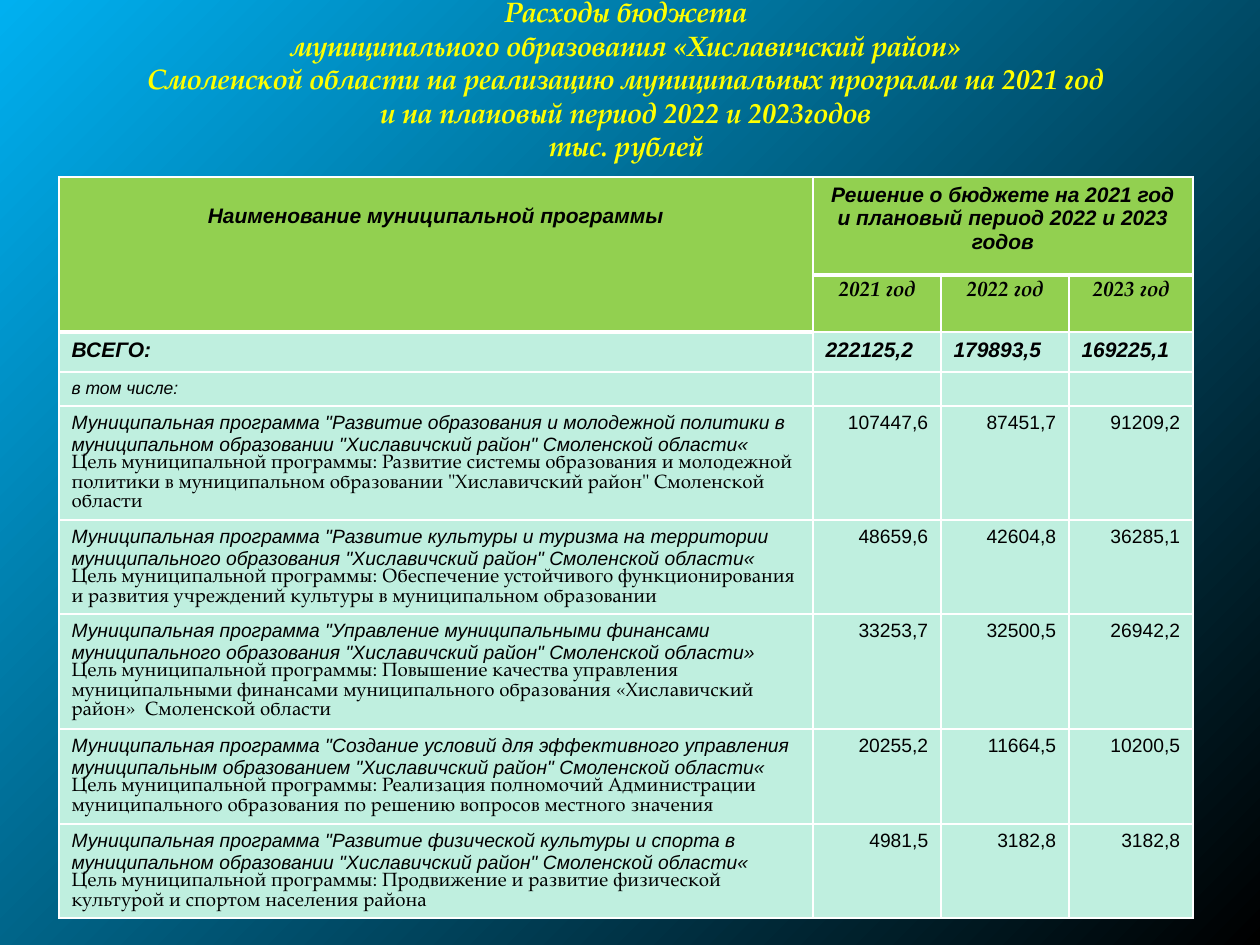
from lxml import etree
from pptx import Presentation
from pptx.dml.color import RGBColor
from pptx.enum.text import MSO_ANCHOR, MSO_AUTO_SIZE, PP_ALIGN
from pptx.oxml import parse_xml
from pptx.oxml.ns import nsdecls, qn
from pptx.util import Emu, Pt

LEFT, CENTER, RIGHT = PP_ALIGN.LEFT, PP_ALIGN.CENTER, PP_ALIGN.RIGHT
SANS, SERIF = "Arial", "TeX Gyre Pagella"
COLORS = {"title": "FFFF00", "text": "000000", "header": "92D050", "body": "BFEFDF",
          "border": "FFFFFF", "bg_start": "00B0F0", "bg_end": "000000"}

TITLE = [
    "Расходы бюджета",
    "муниципального образования «Хиславичский район»",
    " Смоленской области на реализацию муниципальных программ на 2021 год ",
    "и на плановый период 2022 и 2023годов",
    "тыс. рублей",
]
NAME_HEADER = "Наименование муниципальной программы"
BUDGET_HEADER = "Решение о бюджете на 2021 год и плановый период 2022 и 2023 годов"
YEARS = ["2021 год", "2022 год", "2023 год"]
TOTAL = ["ВСЕГО:", "222125,2", "179893,5", "169225,1"]
INCLUDING = "в том числе:"
PROGRAM_PREFIX = "Муниципальная программа \""
GOAL_PREFIX = "Цель муниципальной программы: "
PROGRAMS = [
    ("Развитие образования и молодежной политики в муниципальном образовании "
     "\"Хиславичский район\" Смоленской области«",
     "Развитие системы образования и молодежной политики в муниципальном образовании "
     "\"Хиславичский район\" Смоленской области",
     ["107447,6", "87451,7", "91209,2"]),
    ("Развитие культуры и туризма на территории муниципального образования "
     "\"Хиславичский район\" Смоленской области«",
     "Обеспечение устойчивого функционирования и развития учреждений культуры "
     "в муниципальном образовании",
     ["48659,6", "42604,8", "36285,1"]),
    ("Управление муниципальными финансами муниципального образования "
     "\"Хиславичский район\" Смоленской области»",
     "Повышение качества управления муниципальными финансами муниципального образования "
     "«Хиславичский район»  Смоленской области",
     ["33253,7", "32500,5", "26942,2"]),
    ("Создание условий для эффективного управления муниципальным образованием "
     "\"Хиславичский район\" Смоленской области«",
     "Реализация полномочий Администрации муниципального образования "
     "по решению вопросов местного значения",
     ["20255,2", "11664,5", "10200,5"]),
    ("Развитие физической культуры и спорта в муниципальном образовании "
     "\"Хиславичский район\" Смоленской области«",
     "Продвижение и развитие физической культурой и спортом населения района",
     ["4981,5", "3182,8", "3182,8"]),
]

SLIDE_W, SLIDE_H = 1260, 945
TABLE_LEFT, TABLE_TOP = 59, 177
COLUMN_WIDTHS = [754, 128, 128, 124]
ROW_HEIGHTS = [98, 57, 40, 34, 114, 94, 115, 95, 94]
HEADER_ROWS = 2
# Grid edges (row, column) drawn with the thick line under the header
THICK_EDGES = {(1, 0), (1, 1), (1, 2), (1, 3), (2, 0)}


def px(value):
    return Emu(value * 914400 // 126)


def style(font, size, name, color="text", bold=False, italic=False):
    font.size, font.name = Pt(size), name
    font.bold, font.italic = bold, italic
    font.color.rgb = RGBColor.from_string(COLORS[color])


def write(paragraph, text, size, name, align=LEFT, bold=False, italic=False):
    paragraph.alignment = align
    run = paragraph.add_run()
    run.text = text
    style(run.font, size, name, bold=bold, italic=italic)


def set_background(slide):
    stops = "".join(
        f'<a:gs pos="{pos}"><a:srgbClr val="{COLORS[key]}"/></a:gs>'
        for pos, key in ((0, "bg_start"), (100000, "bg_end")))
    slide.element.cSld.insert(0, parse_xml(
        f'<p:bg {nsdecls("p", "a")}><p:bgPr><a:gradFill><a:gsLst>{stops}</a:gsLst>'
        '<a:path path="circle"><a:fillToRect r="100000" b="100000"/></a:path>'
        '</a:gradFill><a:effectLst/></p:bgPr></p:bg>'))


def set_borders(cell, row, col):
    edges = {"lnL": 1, "lnR": 1,
             "lnT": 3 if (row, col) in THICK_EDGES else 1,
             "lnB": 3 if (row + 1, col) in THICK_EDGES else 1}
    properties = cell._tc.get_or_add_tcPr()
    for index, (tag, width) in enumerate(edges.items()):
        properties.insert(index, parse_xml(
            f'<a:{tag} {nsdecls("a")} w="{Pt(width)}"><a:solidFill>'
            f'<a:srgbClr val="{COLORS["border"]}"/></a:solidFill></a:{tag}>'))


def add_title(slide):
    title = slide.shapes.title
    title.left, title.top, title.width, title.height = px(59), 0, px(1134), px(157)
    frame = title.text_frame
    frame.auto_size = MSO_AUTO_SIZE.NONE
    frame.word_wrap = True
    frame.vertical_anchor = MSO_ANCHOR.MIDDLE
    paragraph = frame.paragraphs[0]
    paragraph.alignment = CENTER
    for index, line in enumerate(TITLE):
        if index:
            paragraph.add_line_break()
        run = paragraph.add_run()
        run.text = line
        style(run.font, 16, SERIF, "title", bold=True, italic=True)


def add_budget_table(slide):
    table = slide.shapes.add_table(
        len(ROW_HEIGHTS), len(COLUMN_WIDTHS), px(TABLE_LEFT), px(TABLE_TOP),
        px(sum(COLUMN_WIDTHS)), px(sum(ROW_HEIGHTS))).table
    for column, width in zip(table.columns, COLUMN_WIDTHS):
        column.width = px(width)
    for row, height in enumerate(ROW_HEIGHTS):
        table.rows[row].height = px(height)
        for col in range(len(COLUMN_WIDTHS)):
            cell = table.cell(row, col)
            cell.fill.solid()
            key = "header" if row < HEADER_ROWS else "body"
            cell.fill.fore_color.rgb = RGBColor.from_string(COLORS[key])
            set_borders(cell, row, col)

    def first_paragraph(row, col):
        return table.cell(row, col).text_frame.paragraphs[0]

    strong = {"bold": True, "italic": True}
    table.cell(0, 0).merge(table.cell(1, 0))
    table.cell(0, 1).merge(table.cell(0, 3))
    table.cell(0, 0).margin_top = px(27)
    write(first_paragraph(0, 0), NAME_HEADER, 12, SANS, CENTER, **strong)
    write(first_paragraph(0, 1), BUDGET_HEADER, 12, SANS, CENTER, **strong)
    for col, year in enumerate(YEARS, 1):
        write(first_paragraph(1, col), year, 12, SERIF, CENTER, **strong)
    for col, text in enumerate(TOTAL):
        write(first_paragraph(2, col), text, 12, SANS, **strong)

    write(first_paragraph(3, 0), INCLUDING, 10, SANS, italic=True)
    for col in range(1, len(COLUMN_WIDTHS)):
        etree.SubElement(first_paragraph(3, col)._p, qn("a:endParaRPr"), sz="1000")

    for row, (program, goal, amounts) in enumerate(PROGRAMS, 4):
        write(first_paragraph(row, 0), PROGRAM_PREFIX + program, 11, SANS, italic=True)
        goal_line = table.cell(row, 0).text_frame.add_paragraph()
        goal_line.line_spacing = Pt(11)
        write(goal_line, GOAL_PREFIX + goal, 11, SERIF)
        for col, amount in enumerate(amounts, 1):
            write(first_paragraph(row, col), amount, 11, SANS, RIGHT)


def main():
    deck = Presentation()
    deck.slide_width, deck.slide_height = px(SLIDE_W), px(SLIDE_H)
    slide = deck.slides.add_slide(deck.slide_layouts[5])
    set_background(slide)
    add_title(slide)
    add_budget_table(slide)
    deck.save("out.pptx")


if __name__ == "__main__":
    main()
